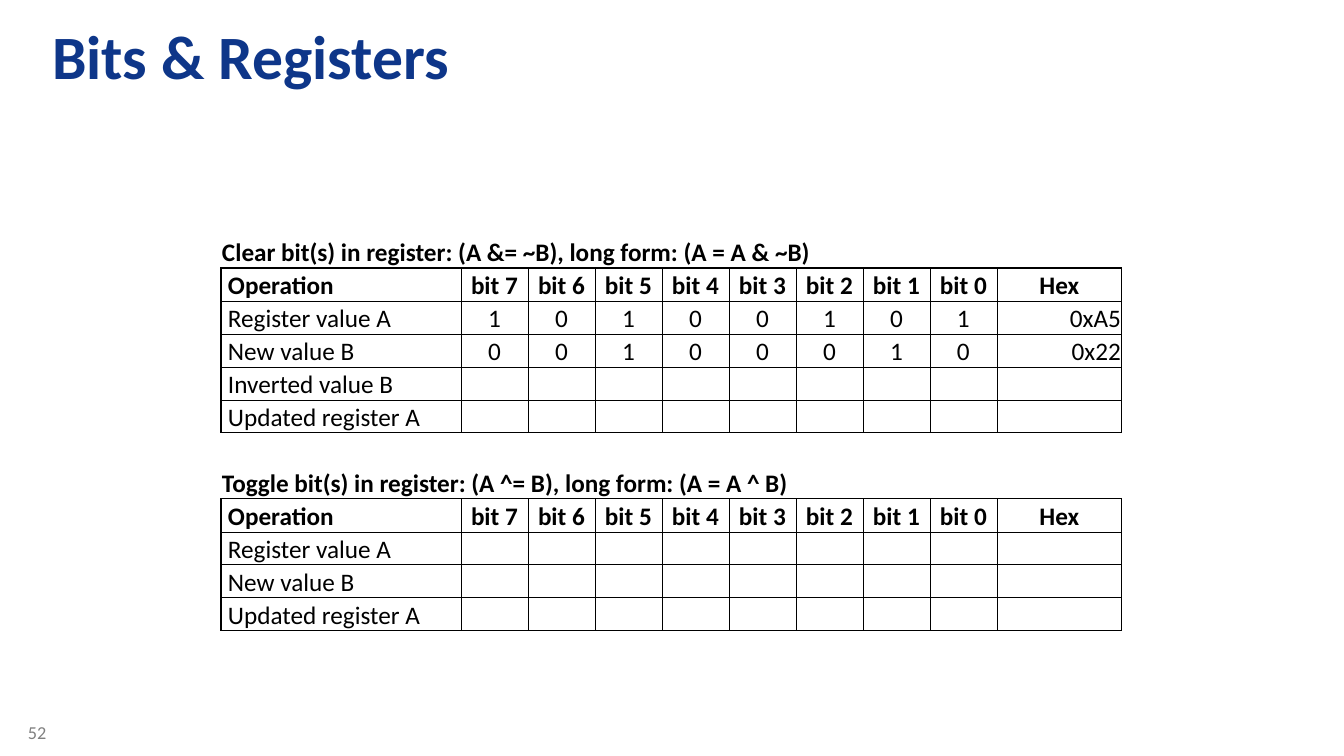
from lxml.etree import SubElement
from pptx import Presentation
from pptx.dml.color import RGBColor
from pptx.enum.text import MSO_ANCHOR, MSO_AUTO_SIZE, PP_ALIGN
from pptx.oxml.ns import qn
from pptx.util import Pt

INK = RGBColor(0x00, 0x00, 0x00)
NAVY = RGBColor(0x0E, 0x36, 0x89)
GRAY = RGBColor(0x80, 0x80, 0x80)
FONT = "Calibri"

ROW_HEIGHT = 33
COLUMN_WIDTHS = [240] + [67] * 8 + [125]
OUTER, INNER, NONE = 1, 0.5, 0  # border widths in points

HEADER = ["Operation"] + [f"bit {n}" for n in range(7, -1, -1)] + ["Hex"]
OPERATIONS = [
    ("Clear bit(s) in register: (A &= ~B), long form: (A = A & ~B)", [
        ["Register value A", *"10100101", "0xA5"],
        ["New value B", *"00100010", "0x22"],
        ["Inverted value B"],
        ["Updated register A"],
    ]),
    ("Toggle bit(s) in register: (A ^= B), long form: (A = A ^ B)", [
        ["Register value A"],
        ["New value B"],
        ["Updated register A"],
    ]),
]


def px(length):
    return round(length * 914400 / 100.8)


def style(paragraph, size, color, bold=False, align=PP_ALIGN.LEFT):
    paragraph.alignment = align
    font = paragraph.font
    font.name, font.size, font.bold = FONT, Pt(size), bold
    font.color.rgb = color


def set_borders(cell, left, right, top, bottom):
    """Draw the four edges of a cell; a width of zero hides the edge."""
    properties = cell._tc.get_or_add_tcPr()
    for side, width in zip("LRTB", (left, right, top, bottom)):
        edge = SubElement(properties, qn(f"a:ln{side}"), w=str(Pt(width)))
        if width:
            fill = SubElement(edge, qn("a:solidFill"))
            SubElement(fill, qn("a:srgbClr"), val=str(INK))
        else:
            SubElement(edge, qn("a:noFill"))


def fill_cell(cell, text, borders, bold=False, align=PP_ALIGN.LEFT, indent=1):
    set_borders(cell, *borders)
    cell.fill.background()
    cell.margin_left = px(indent)
    cell.margin_right = cell.margin_top = px(1)
    cell.margin_bottom = 0
    cell.vertical_anchor = MSO_ANCHOR.BOTTOM
    cell.text = text
    style(cell.text_frame.paragraphs[0], 18, INK, bold, align)


def add_caption(table, row, caption):
    last = len(COLUMN_WIDTHS) - 1
    for column in range(last + 1):
        fill_cell(table.cell(row, column), "" if column else caption,
                  (NONE, NONE, NONE, OUTER), bold=True)
    table.cell(row, 0).merge(table.cell(row, last))


def add_register_grid(table, first_row, registers):
    """Fill the header and register rows; short rows are padded with blanks."""
    lines = [HEADER] + registers
    last_line, last_column = len(lines) - 1, len(HEADER) - 1
    for line, values in enumerate(lines):
        for column in range(len(HEADER)):
            is_label, is_hex = column == 0, column == last_column
            borders = (OUTER if is_label else INNER,
                       OUTER if is_hex else INNER,
                       OUTER if line == 0 else INNER,
                       OUTER if line == last_line else INNER)
            if is_label:
                align = PP_ALIGN.LEFT
            elif is_hex and line:
                align = PP_ALIGN.RIGHT
            else:
                align = PP_ALIGN.CENTER
            text = values[column] if column < len(values) else ""
            fill_cell(table.cell(first_row + line, column), text, borders,
                      line == 0, align, indent=7 if is_label else 1)


def add_operations_table(slide, left, top):
    """Stack the operations in one table with a blank row between them."""
    row_count = sum(len(registers) + 3 for _, registers in OPERATIONS) - 1
    frame = slide.shapes.add_table(
        row_count, len(COLUMN_WIDTHS), px(left), px(top),
        px(sum(COLUMN_WIDTHS)), px(ROW_HEIGHT * row_count))
    table = frame.table
    table.first_row = table.horz_banding = False
    for column, width in zip(table.columns, COLUMN_WIDTHS):
        column.width = px(width)
    for row in table.rows:
        row.height = px(ROW_HEIGHT)

    row = 0
    for caption, registers in OPERATIONS:
        if row:
            for column in range(len(COLUMN_WIDTHS)):
                fill_cell(table.cell(row, column), "",
                          (NONE, NONE, OUTER, NONE))
            row += 1
        add_caption(table, row, caption)
        add_register_grid(table, row + 1, registers)
        row += len(registers) + 2


def add_title(slide, left, top, width, height):
    title = slide.shapes.title
    title.left, title.top = px(left), px(top)
    title.width, title.height = px(width), px(height)
    frame = title.text_frame
    frame.text = "Bits & Registers"
    frame.auto_size = MSO_AUTO_SIZE.NONE
    frame.vertical_anchor = MSO_ANCHOR.TOP
    frame.margin_left = frame.margin_right = px(13)
    frame.margin_top = frame.margin_bottom = px(7)
    style(frame.paragraphs[0], 44, NAVY, bold=True)


def add_page_number(slide, left, top, width, height):
    box = slide.shapes.add_textbox(px(left), px(top), px(width), px(height))
    box.text_frame.word_wrap = True
    box.text_frame.text = "52"
    style(box.text_frame.paragraphs[0], 13, GRAY)


def main():
    deck = Presentation()
    deck.slide_width, deck.slide_height = px(1344), px(756)
    slide = deck.slides.add_slide(deck.slide_layouts.get_by_name("Title Only"))
    add_page_number(slide, 18, 716, 59, 40)
    add_title(slide, 39, 11, 1257, 104)
    add_operations_table(slide, 221, 235)
    deck.save("out.pptx")


if __name__ == "__main__":
    main()
